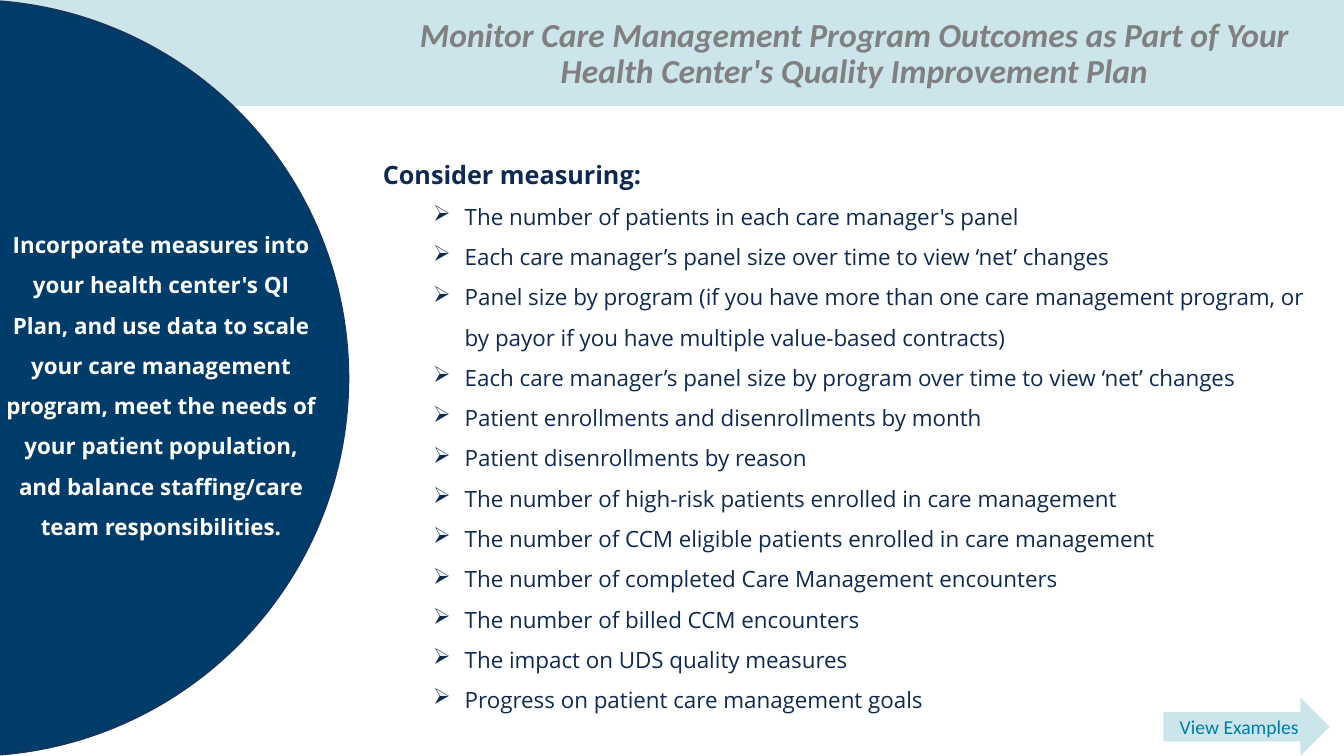
from dataclasses import dataclass

from lxml import etree
from pptx import Presentation
from pptx.dml.color import RGBColor
from pptx.enum import shapes, text
from pptx.oxml import ns
from pptx.util import Pt

TITLE = "Monitor Care Management Program Outcomes as Part of Your Health Center's Quality Improvement Plan"
# The space after the last "and" is non-breaking, to keep "and balance" on one line.
MESSAGE = (
    "Incorporate measures into your health center's QI Plan, and use data to scale "
    "your care management program, meet the needs of your patient population, "
    "and balance staffing/care team responsibilities."
)
HEADING = "Consider measuring:"
MEASURES = [
    "The number of patients in each care manager's panel",
    "Each care manager’s panel size over time to view ‘net’ changes",
    "Panel size by program (if you have more than one care management program, "
    "or by payor if you have multiple value-based contracts)",
    "Each care manager’s panel size by program over time to view ‘net’ changes",
    "Patient enrollments and disenrollments by month",
    "Patient disenrollments by reason",
    "The number of high-risk patients enrolled in care management",
    "The number of CCM eligible patients enrolled in care management",
    "The number of completed Care Management encounters",
    "The number of billed CCM encounters",
    "The impact on UDS quality measures",
    "Progress on patient care management goals",
]
BUTTON = "View Examples"

# Left, top, width, height in points
SLIDE_SIZE = (960, 540)
BAND_BOX = (-8, -0.7, 968, 75.6)
CIRCLE_BOX = (-291, 0, 540, 540)
MESSAGE_BOX = (-5, 152, 240, 237)
TITLE_BOX = (261.4, 9.4, 697.7, 62.6)
BUTTON_BOX = (831, 498.2, 118.8, 41.8)
MEASURES_BOX = (266.4, 99.4, 674.6, 414.7)
BULLET_INDENT = (58.5, -22.5)


@dataclass(frozen=True)
class Theme:
    pale: str = "CCE5EB"
    navy: str = "003C6A"
    outline: str = "1E3256"
    ink: str = "0F2A52"
    grey: str = "808080"
    teal: str = "007CA4"
    white: str = "FFFFFF"
    heading_font: str = "Calibri"
    body_font: str = "Open Sans"
    title_size: int = 24
    heading_size: int = 18
    body_size: int = 16
    button_size: int = 14


THEME = Theme()


def points(values):
    return [Pt(value) for value in values]


def add_filled_shape(slide, kind, box, fill, line=None):
    shape = slide.shapes.add_shape(kind, *points(box))
    shape.shadow.inherit = False
    shape.fill.solid()
    shape.fill.fore_color.rgb = RGBColor.from_string(fill)
    if line:
        shape.line.color.rgb = RGBColor.from_string(line)
        shape.line.width = Pt(1)
    else:
        shape.line.fill.background()
    return shape


def add_text_frame(slide, box):
    frame = slide.shapes.add_textbox(*points(box)).text_frame
    frame.word_wrap = True
    return frame


def write(paragraph, words, font, size, color, bold=False, italic=False,
          align=text.PP_ALIGN.CENTER, spacing=1.0):
    paragraph.alignment = align
    paragraph.line_spacing = spacing
    run = paragraph.add_run()
    run.text = words
    run.font.name = font
    run.font.size = Pt(size)
    run.font.bold = bold
    run.font.italic = italic
    run.font.color.rgb = RGBColor.from_string(color)


def add_bullet(paragraph, indent):
    left, hanging = points(indent)
    properties = paragraph._p.get_or_add_pPr()
    properties.set("marL", str(left))
    properties.set("indent", str(hanging))
    etree.SubElement(properties, ns.qn("a:buChar")).set("char", "➢")


def place_title(slide):
    title = slide.shapes.title
    title.left, title.top, title.width, title.height = points(TITLE_BOX)
    title.element.getparent().append(title.element)  # in front of the band
    frame = title.text_frame
    frame.auto_size = text.MSO_AUTO_SIZE.NONE
    frame.vertical_anchor = text.MSO_ANCHOR.TOP
    write(frame.paragraphs[0], TITLE, THEME.heading_font, THEME.title_size, THEME.grey,
          bold=True, italic=True, spacing=0.9)


def add_measures(slide):
    frame = add_text_frame(slide, MEASURES_BOX)
    left = text.PP_ALIGN.LEFT
    write(frame.paragraphs[0], HEADING, THEME.body_font, THEME.heading_size, THEME.ink,
          bold=True, align=left, spacing=1.5)
    for measure in MEASURES:
        paragraph = frame.add_paragraph()
        paragraph.level = 1
        add_bullet(paragraph, BULLET_INDENT)
        write(paragraph, measure, THEME.body_font, THEME.body_size, THEME.ink,
              align=left, spacing=1.5)


def main():
    presentation = Presentation()
    presentation.slide_width, presentation.slide_height = points(SLIDE_SIZE)
    slide = presentation.slides.add_slide(presentation.slide_layouts[5])

    kinds = shapes.MSO_SHAPE
    add_filled_shape(slide, kinds.RECTANGLE, BAND_BOX, THEME.pale, THEME.pale)
    add_filled_shape(slide, kinds.OVAL, CIRCLE_BOX, THEME.navy, THEME.outline)
    message = add_text_frame(slide, MESSAGE_BOX)
    write(message.paragraphs[0], MESSAGE, THEME.body_font, THEME.body_size, THEME.white,
          bold=True, spacing=1.5)
    place_title(slide)
    button = add_filled_shape(slide, kinds.RIGHT_ARROW, BUTTON_BOX, THEME.pale)
    button.text_frame.vertical_anchor = text.MSO_ANCHOR.MIDDLE
    write(button.text_frame.paragraphs[0], BUTTON, THEME.heading_font, THEME.button_size,
          THEME.teal)
    add_measures(slide)

    presentation.save("out.pptx")


if __name__ == "__main__":
    main()
